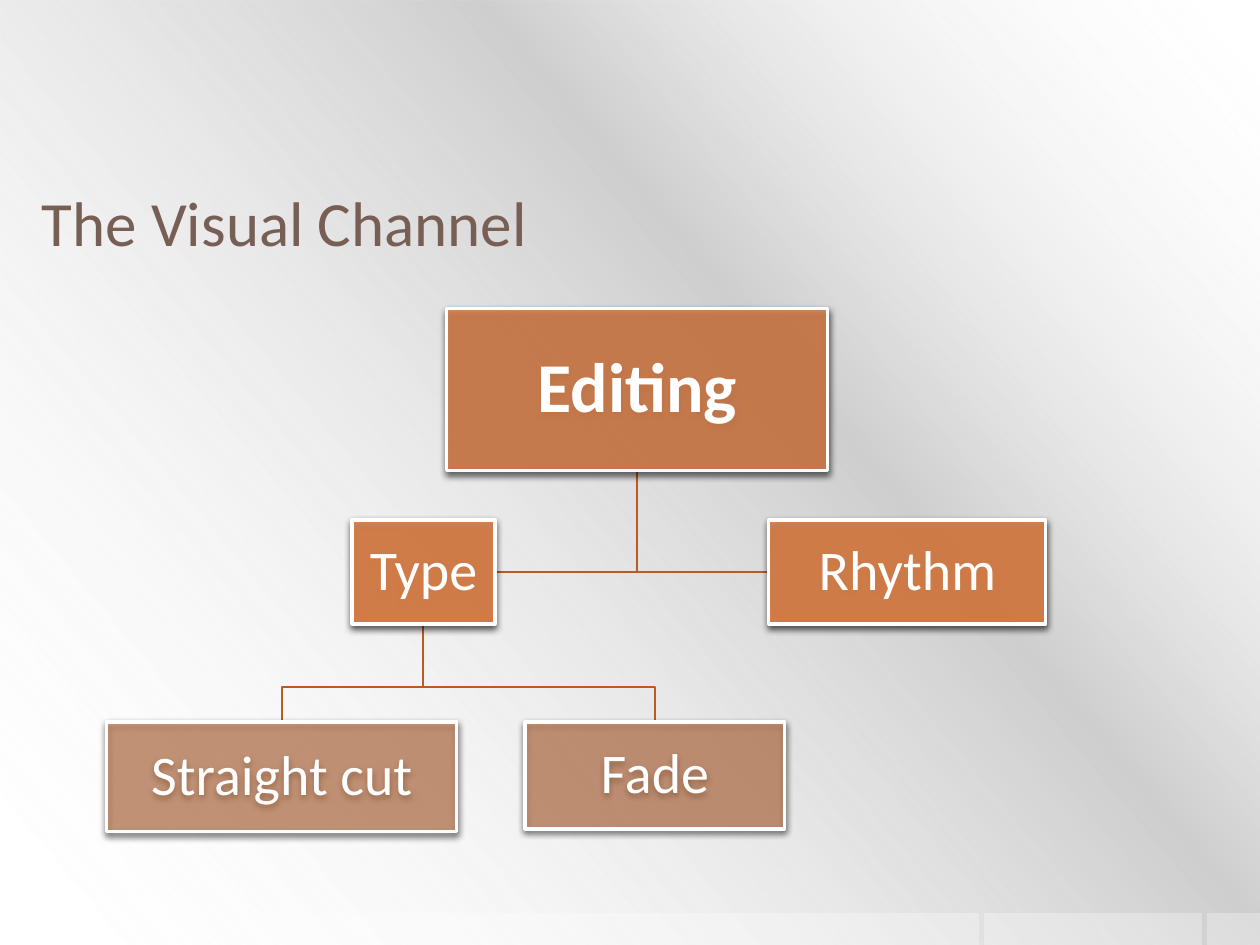
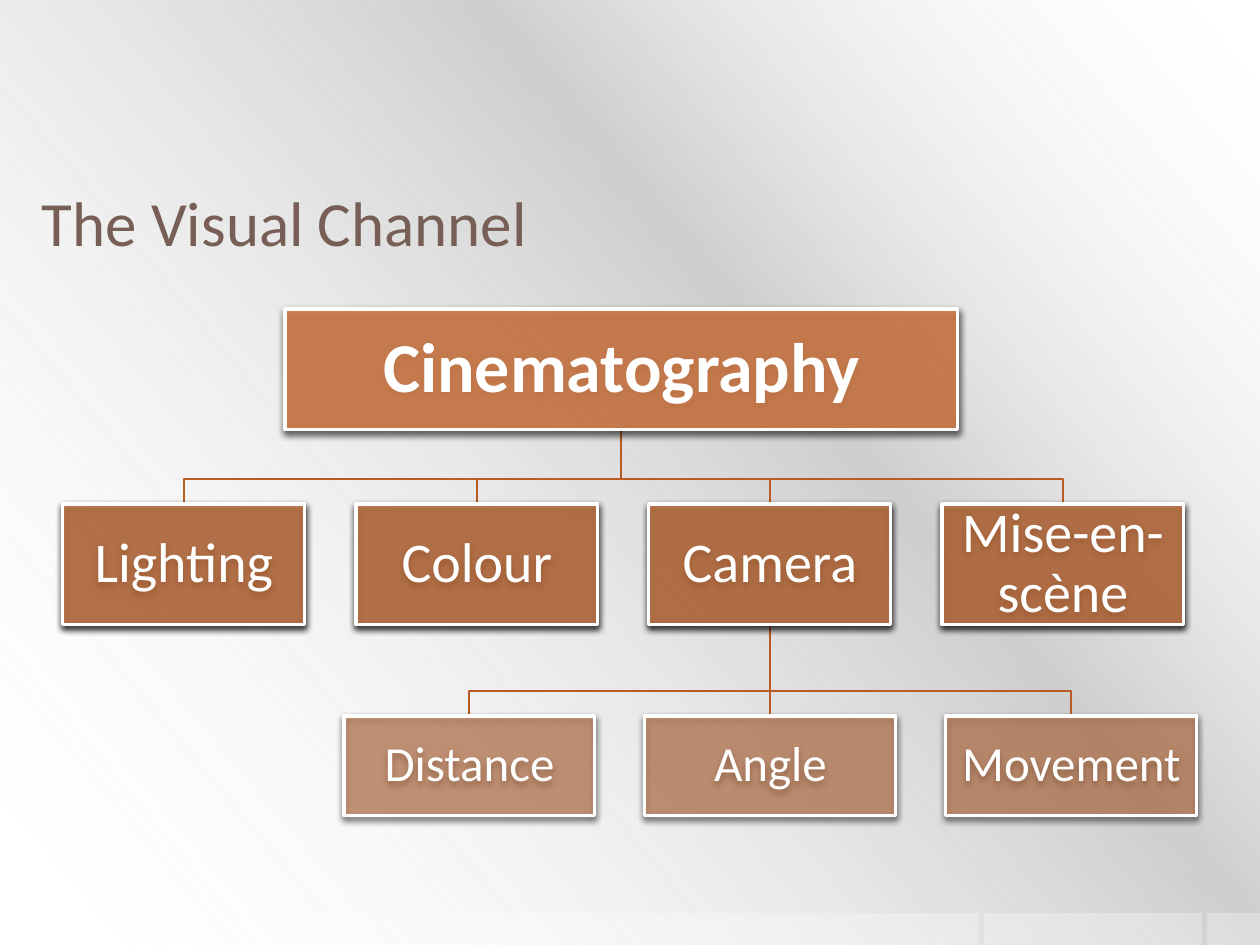
"""Builds two organisation-chart slides about the visual channel of film."""
import dataclasses

import lxml.etree
import pptx
import pptx.dml.color
import pptx.enum.shapes
import pptx.enum.text
import pptx.oxml
import pptx.oxml.ns
import pptx.util

SCALE = 914400 / 126
WIDTH, HEIGHT = 1260, 945


@dataclasses.dataclass(frozen=True)
class Theme:
    """Holds the colours, font and type sizes of the deck."""
    font: str = "Calibri"
    paper: str = "FFFFFF"
    sheen: str = "BFBFBF"
    title: str = "775F55"
    box: str = "DD8047"
    link: str = "B95B22"
    shadow: str = "000000"
    title_pt: int = 36
    root_pt: int = 40
    branch_pt: int = 32
    leaf_pt: int = 28
    edge_pt: float = 1.75
    link_pt: float = 1.1


THEME = Theme()


@dataclasses.dataclass(frozen=True)
class Box:
    """Describes one labelled chart box, in px."""
    text: str
    x: int
    y: int
    w: int
    h: int
    alpha: int
    size: int = THEME.branch_pt
    bold: bool = False

    @property
    def cx(self):
        """Returns the horizontal centre."""
        return self.x + self.w // 2

    @property
    def cy(self):
        """Returns the vertical centre."""
        return self.y + self.h // 2

    @property
    def bottom(self):
        """Returns the lower edge."""
        return self.y + self.h


def px(n):
    """Turns px into EMU."""
    return pptx.util.Emu(round(n * SCALE))


def rgb(colour):
    """Turns a hex string into a colour."""
    return pptx.dml.color.RGBColor.from_string(colour)


def add_xml(parent, markup):
    """Appends drawing markup to an element and returns it."""
    ns = pptx.oxml.ns.nsdecls("a")
    tag, rest = markup.split(" ", 1) if " " in markup.split(">")[0] else markup.split(">", 1)
    joint = " " if " " in markup.split(">")[0] else ">"
    el = pptx.oxml.parse_xml(f"{tag} {ns}{joint}{rest}")
    parent.append(el)
    return el


def add_rect(s, x, y, w, h):
    """Adds a plain rectangle with no line or shadow."""
    kind = pptx.enum.shapes.MSO_SHAPE.RECTANGLE
    sp = s.shapes.add_shape(kind, px(x), px(y), px(w), px(h))
    sp.shadow.inherit = False
    sp.line.fill.background()
    return sp


def fill_alpha(sp, colour, alpha):
    """Fills a shape with a colour at a percentage of opacity."""
    sp.fill.solid()
    sp.fill.fore_color.rgb = rgb(colour)
    clr = sp._element.spPr.find(".//" + pptx.oxml.ns.qn("a:srgbClr"))
    add_xml(clr, f'<a:alpha val="{alpha * 1000}"/>')


def fill_gradient(sp, stops, angle):
    """Fills a shape with a linear gradient of position, colour and opacity."""
    sp.fill.gradient()
    grad = sp._element.spPr.find(pptx.oxml.ns.qn("a:gradFill"))
    for child in list(grad):
        grad.remove(child)
    gs_lst = lxml.etree.SubElement(grad, pptx.oxml.ns.qn("a:gsLst"))
    for pos, colour, alpha in stops:
        add_xml(gs_lst, f'<a:gs pos="{pos * 1000}"><a:srgbClr val="{colour}">'
                        f'<a:alpha val="{alpha * 1000}"/></a:srgbClr></a:gs>')
    add_xml(grad, f'<a:lin ang="{angle * 60000}" scaled="0"/>')


def add_shadow(sp):
    """Gives a shape a soft shadow straight below it."""
    effects = sp._element.spPr.find(pptx.oxml.ns.qn("a:effectLst"))
    add_xml(effects, '<a:outerShdw blurRad="50800" dist="25400" dir="5400000" '
                     f'rotWithShape="0"><a:srgbClr val="{THEME.shadow}">'
                     '<a:alpha val="70000"/></a:srgbClr></a:outerShdw>')


def set_text(sp, text, size, colour, bold, inset_x, inset_y):
    """Writes one vertically centred paragraph and returns it."""
    tf = sp.text_frame
    tf.word_wrap = True
    tf.vertical_anchor = pptx.enum.text.MSO_ANCHOR.MIDDLE
    tf.margin_left = tf.margin_right = px(inset_x)
    tf.margin_top = tf.margin_bottom = px(inset_y)
    tf.text = text
    p = tf.paragraphs[0]
    r = p.runs[0]
    r.font.name = THEME.font
    r.font.size = pptx.util.Pt(size)
    r.font.bold = bold
    r.font.color.rgb = rgb(colour)
    return p


def add_box(s, box):
    """Draws one chart box with its label."""
    sp = add_rect(s, box.x, box.y, box.w, box.h)
    fill_alpha(sp, THEME.box, box.alpha)
    sp.line.color.rgb = rgb(THEME.paper)
    sp.line.width = pptx.util.Pt(THEME.edge_pt)
    add_shadow(sp)
    p = set_text(sp, box.text, box.size, THEME.paper, box.bold, 3, 3)
    p.alignment = pptx.enum.text.PP_ALIGN.CENTER
    p.line_spacing = 0.9


def add_link(s, points):
    """Draws a link through points, as a connector when it is straight."""
    (x1, y1), (x2, y2) = points[0], points[-1]
    if x1 == x2:
        kind = pptx.enum.shapes.MSO_CONNECTOR.STRAIGHT
        sp = s.shapes.add_connector(kind, px(x1), px(y1), px(x2), px(y2))
        add_xml(sp._element.spPr, "<a:effectLst />")
    else:
        builder = s.shapes.build_freeform(x1, y1, scale=SCALE)
        builder.add_line_segments(points[1:], close=False)
        sp = builder.convert_to_shape()
        sp.fill.background()
        sp.shadow.inherit = False
    sp.line.color.rgb = rgb(THEME.link)
    sp.line.width = pptx.util.Pt(THEME.link_pt)


def link_below(s, parent, children, rise):
    """Links a box to the tops of its children by a bar set above them."""
    for child in children:
        bar = child.y - rise
        add_link(s, [(parent.cx, parent.bottom), (parent.cx, bar),
                     (child.cx, bar), (child.cx, child.y)])


def link_beside(s, parent, left, right):
    """Links a box to the inner sides of two children."""
    for child, edge in ((left, left.x + left.w), (right, right.x)):
        add_link(s, [(parent.cx, parent.bottom), (parent.cx, child.cy),
                     (edge, child.cy)])


def row(labels, x, step, y, w, h, alpha, size):
    """Returns equal boxes set at a fixed step."""
    return [Box(label, x + i * step, y, w, h, alpha, size)
            for i, label in enumerate(labels)]


def add_slide(prs, title):
    """Adds a slide with the shared background, footer bands and title."""
    s = prs.slides.add_slide(prs.slide_layouts[6])
    sheen = add_rect(s, 0, 0, WIDTH, HEIGHT)
    fill_gradient(sheen, [(0, THEME.paper, 0), (34, THEME.sheen, 61),
                          (38, THEME.sheen, 76), (100, THEME.paper, 0)], 140)
    for x, right in ((1207, WIDTH), (984, 1202), (0, 979)):
        fill_alpha(add_rect(s, x, 913, right - x, 32), THEME.paper, 30)
    sp = s.shapes.add_textbox(px(42), px(158), px(1134), px(126))
    set_text(sp, title, THEME.title_pt, THEME.title, False, 0, 6)
    return s


def editing_slide(prs):
    """Builds the chart of editing."""
    s = add_slide(prs, "The Visual Channel")
    root = Box("Editing", 447, 309, 381, 162, 80, THEME.root_pt, True)
    kind = Box("Type", 352, 520, 143, 104, 90)
    rhythm = Box("Rhythm", 769, 520, 277, 104, 90)
    cuts = [Box("Straight cut", 107, 722, 350, 110, 50),
            Box("Fade", 525, 722, 260, 107, 50)]
    link_beside(s, root, kind, rhythm)
    link_below(s, kind, cuts, 35)
    for box in (root, kind, rhythm, *cuts):
        add_box(s, box)


def cinematography_slide(prs):
    """Builds the chart of cinematography."""
    s = add_slide(prs, "The Visual Channel")
    root = Box("Cinematography", 285, 309, 673, 121, 80, THEME.root_pt, True)
    branches = row(["Lighting", "Colour", "Camera", "Mise-en-scène"],
                   63, 293, 504, 242, 121, 70, THEME.branch_pt)
    leaves = row(["Distance", "Angle", "Movement"],
                 344, 301, 716, 251, 100, 50, THEME.leaf_pt)
    link_below(s, root, branches, 25)
    link_below(s, branches[2], leaves, 25)
    for box in (root, *branches, *leaves):
        add_box(s, box)


def main():
    """Builds and saves the deck."""
    prs = pptx.Presentation()
    prs.slide_width, prs.slide_height = px(WIDTH), px(HEIGHT)
    editing_slide(prs)
    cinematography_slide(prs)
    prs.save("out.pptx")


if __name__ == "__main__":
    main()
